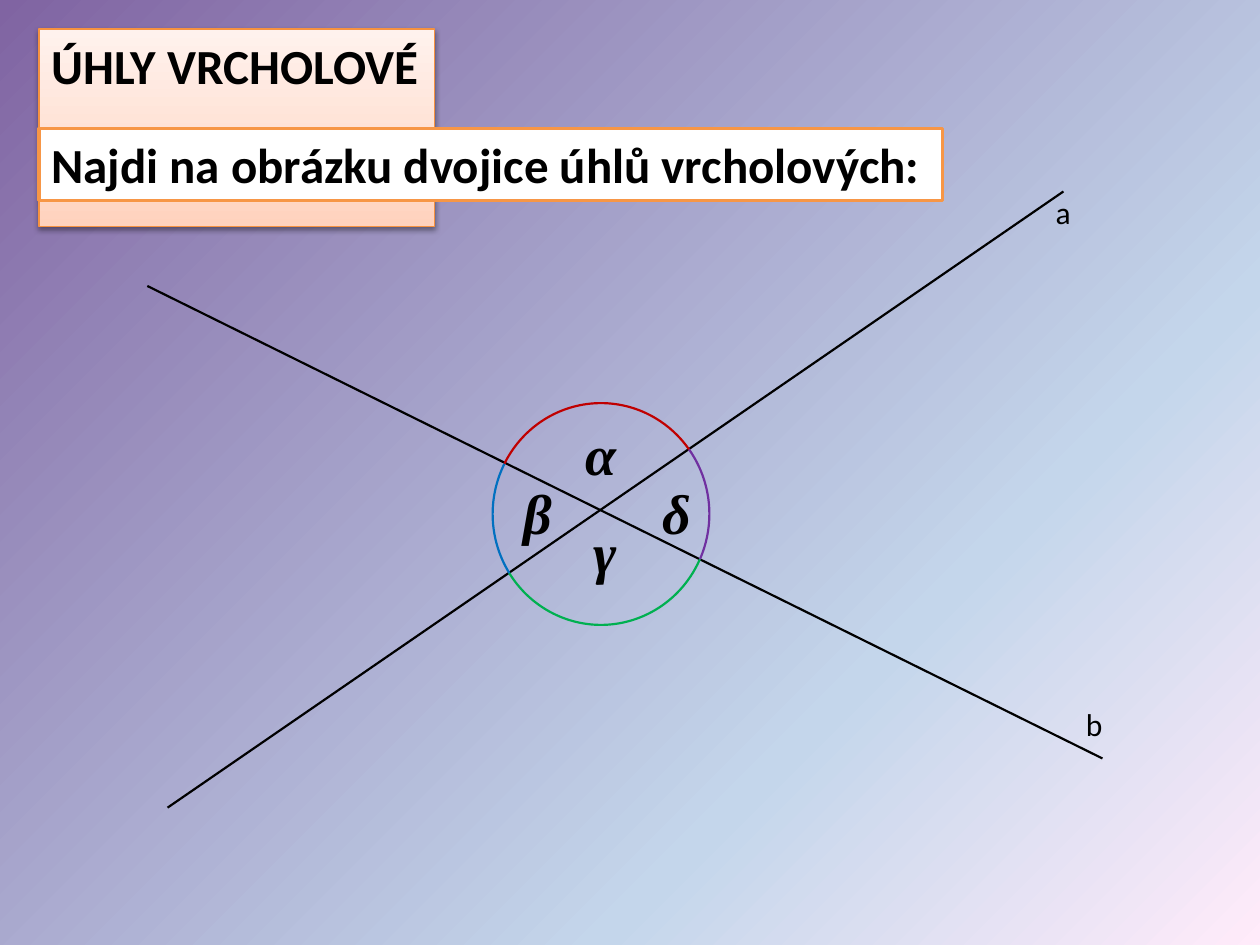
from dataclasses import dataclass

from lxml import etree
from pptx import Presentation
from pptx.dml.color import RGBColor
from pptx.enum.shapes import MSO_CONNECTOR, MSO_SHAPE
from pptx.enum.text import MSO_ANCHOR, MSO_AUTO_SIZE, PP_ALIGN
from pptx.oxml.ns import qn
from pptx.util import Inches, Pt

STRAIGHT = MSO_CONNECTOR.STRAIGHT
ARC = MSO_SHAPE.ARC
TOP = MSO_ANCHOR.TOP
FIT_SHAPE = MSO_AUTO_SIZE.SHAPE_TO_FIT_TEXT
LEFT = PP_ALIGN.LEFT
TITLE_ONLY = 5


@dataclass(frozen=True)
class Theme:
    # Gradient stops: position %, colour, opacity %
    background: tuple = ((0, "8064A2", 71), (70, "C4D6EB", 100), (100, "FFEBFA", 100))
    title_fill: tuple = ((0, "FFD2BD", 100), (35, "FFDED0", 100), (100, "FFF2ED", 100))
    title_line: str = "F69240"
    task_fill: str = "FFFFFF"
    task_line: str = "F79646"
    ink: str = "000000"
    alpha: str = "C00000"
    beta: str = "0070C0"
    gamma: str = "00B050"
    delta: str = "7030A0"
    text_font: str = "Calibri"
    angle_font: str = "Times New Roman"
    heading_size: int = 28
    angle_size: int = 32
    label_size: int = 18
    stroke: float = 1.25


class SlideBuilder:
    def __init__(self, slide, theme):
        self.slide = slide
        self.theme = theme

    def _colour(self, parent, colour, opacity):
        node = etree.SubElement(parent, qn("a:srgbClr"), val=colour)
        if opacity < 100:
            etree.SubElement(node, qn("a:alpha"), val=str(opacity * 1000))

    def _gradient(self, fill, holder, stops, angle):
        """Fill with any number of stops; the angle runs clockwise."""
        fill.gradient()
        fill.gradient_angle = (360 - angle) % 360
        stop_list = next(holder.iter(qn("a:gsLst")))
        for old in list(stop_list):
            stop_list.remove(old)
        for position, colour, opacity in stops:
            stop = etree.SubElement(stop_list, qn("a:gs"), pos=str(position * 1000))
            self._colour(stop, colour, opacity)

    def _line(self, line, colour, width):
        line.color.rgb = RGBColor.from_string(colour)
        line.width = Pt(width)

    def _write(self, shape, words, size, font, bold=False, italic=False):
        frame = shape.text_frame
        frame.text = words
        frame.word_wrap = False
        frame.auto_size = FIT_SHAPE
        frame.vertical_anchor = TOP
        paragraph = frame.paragraphs[0]
        paragraph.alignment = LEFT
        style = paragraph.runs[0].font
        style.name, style.size = font, Pt(size)
        style.bold, style.italic = bold, italic
        style.color.rgb = RGBColor.from_string(self.theme.ink)

    def background(self):
        fill = self.slide.background.fill
        self._gradient(fill, self.slide.element, self.theme.background, 45)

    def title(self, words, left, top, width, height):
        theme = self.theme
        title = self.slide.shapes.title
        title.left, title.top = Inches(left), Inches(top)
        title.width, title.height = Inches(width), Inches(height)
        self._write(title, words, theme.heading_size, theme.text_font, bold=True)
        self._gradient(title.fill, title.element, theme.title_fill, 270)
        self._line(title.line, theme.title_line, 0.75)
        # Soft shadow straight below the title
        title.shadow.inherit = False
        effects = title.element.spPr.find(qn("a:effectLst"))
        shadow = etree.SubElement(
            effects, qn("a:outerShdw"), blurRad=str(Pt(3.1)), dist=str(Pt(1.6)),
            dir="5400000", rotWithShape="0")
        self._colour(shadow, theme.ink, 38)

    def text(self, words, left, top, width, height, size, font, **style):
        box = self.slide.shapes.add_textbox(
            Inches(left), Inches(top), Inches(width), Inches(height))
        self._write(box, words, size, font, **style)
        return box

    def task(self, words, left, top, width, height):
        theme = self.theme
        task = self.text(words, left, top, width, height,
                         theme.heading_size, theme.text_font, bold=True)
        task.fill.solid()
        task.fill.fore_color.rgb = RGBColor.from_string(theme.task_fill)
        self._line(task.line, theme.task_line, 2)

    def straight_line(self, start, end):
        line = self.slide.shapes.add_connector(
            STRAIGHT, *(Inches(value) for value in (*start, *end)))
        self._line(line.line, self.theme.ink, self.theme.stroke)
        etree.SubElement(line.element.spPr, qn("a:effectLst"))

    def arc(self, left, top, width, height, start, end, colour):
        arc = self.slide.shapes.add_shape(
            ARC, Inches(left), Inches(top), Inches(width), Inches(height))
        # Adjustments are in units of 100000; a degree is 60000
        arc.adjustments[0], arc.adjustments[1] = start * 0.6, end * 0.6
        arc.fill.background()
        arc.shadow.inherit = False
        self._line(arc.line, colour, self.theme.stroke)


def main():
    theme = Theme()
    presentation = Presentation()
    presentation.slide_width, presentation.slide_height = Inches(10), Inches(7.5)
    slide = presentation.slides.add_slide(presentation.slide_layouts[TITLE_ONLY])
    builder = SlideBuilder(slide, theme)
    builder.background()

    # Two crossing lines
    builder.straight_line((1.17, 2.27), (8.75, 6.02))
    builder.straight_line((8.44, 1.52), (1.33, 6.41))

    # Angles: symbol, label box, arc from and to in degrees, arc colour
    angles = (
        ("α", (4.55, 3.28, 0.45, 0.64), (207.4, 323.8), theme.alpha),
        ("β", (4.06, 3.75, 0.43, 0.64), (147.1, 207.4), theme.beta),
        ("γ", (4.61, 4.06, 0.39, 0.64), (24.5, 147.1), theme.gamma),
        ("δ", (5.16, 3.75, 0.43, 0.64), (323.8, 24.5), theme.delta),
    )
    for symbol, label_box, sweep, colour in angles:
        builder.text(symbol, *label_box, theme.angle_size, theme.angle_font,
                     bold=True, italic=True)
        builder.arc(3.91, 3.2, 1.72, 1.76, *sweep, colour)

    # Names of the lines
    builder.text("a", 8.28, 1.48, 0.32, 0.4, theme.label_size, theme.text_font)
    builder.text("b", 8.52, 5.55, 0.34, 0.4, theme.label_size, theme.text_font)

    # Title and task
    builder.title("ÚHLY VRCHOLOVÉ", 0.31, 0.23, 3.14, 0.57)
    builder.task("Najdi na obrázku dvojice úhlů vrcholových:", 0.31, 1.02, 7.17, 0.57)

    presentation.save("out.pptx")


if __name__ == "__main__":
    main()
